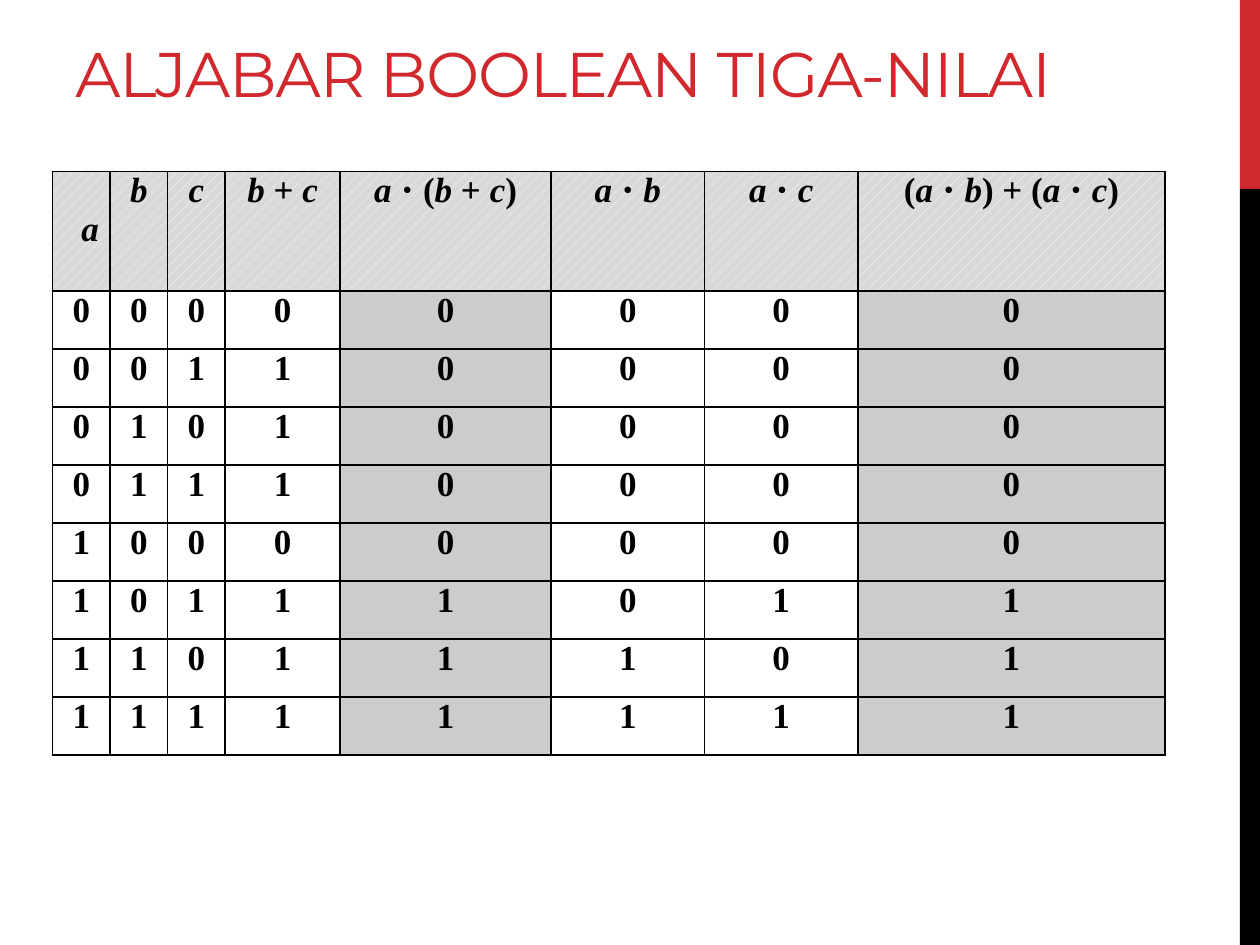
from itertools import groupby, product

from lxml.etree import SubElement as Sub
from pptx import Presentation
from pptx.dml.color import RGBColor as Rgb
from pptx.enum.dml import MSO_PATTERN as Pattern
from pptx.enum.shapes import MSO_SHAPE as Shape
from pptx.enum.text import MSO_ANCHOR as Anchor, PP_ALIGN as Align
from pptx.oxml.ns import qn
from pptx.util import Pt

COLORS = {"red": "D1282E", "black": "000000", "white": "FFFFFF",
          "head": "D9D9D9", "gray": "CCCCCC"}
HEADS = ["a", "b", "c", "b + c", "a ⋅ (b + c)", "a ⋅ b", "a ⋅ c",
         "(a ⋅ b) + (a ⋅ c)"]
WIDTHS = [32.9, 32.9, 32.9, 65.7, 120.6, 87.7, 87.7, 175.5]
SHADED = (4, 7)  # the two sides of the law being proved
HEAD_H, ROW_H = 68.4, 33.15


def color(name):
    return Rgb.from_string(COLORS[name])


def add_run(para, text, font, size, hue, bold=False, italic=False):
    run = para.add_run()
    run.text = text
    run.font.name, run.font.size = font, Pt(size)
    run.font.bold, run.font.italic = bold, italic
    run.font.color.rgb = color(hue)
    return run


def add_bar(slide, top, height, hue):
    bar = slide.shapes.add_shape(Shape.RECTANGLE, Pt(708.5), Pt(top),
                                 Pt(11.5), Pt(height))
    bar.shadow.inherit = False
    bar.fill.solid()
    bar.fill.fore_color.rgb = color(hue)
    bar.line.fill.background()


def add_title(slide, text):
    box = slide.shapes.add_textbox(Pt(36), Pt(12.25), Pt(648), Pt(54))
    frame = box.text_frame
    frame.word_wrap = True
    frame.vertical_anchor = Anchor.BOTTOM
    run = add_run(frame.paragraphs[0], text, "Montserrat", 36, "red")
    run.font._element.set("spc", "-60")


def set_edges(cell):
    props = cell._tc.get_or_add_tcPr()
    for side in ("lnL", "lnR", "lnT", "lnB"):
        line = Sub(props, qn(f"a:{side}"), w=str(Pt(1)))
        fill = Sub(line, qn("a:solidFill"))
        Sub(fill, qn("a:srgbClr"), val=COLORS["black"])


def fill_cell(cell, text):
    """Write a formula or value, with the variables in italics."""
    set_edges(cell)
    cell.margin_left = cell.margin_right = Pt(5)
    cell.margin_top = cell.margin_bottom = 0
    para = cell.text_frame.paragraphs[0]
    para.alignment = Align.CENTER
    for is_var, part in groupby(text, str.isalpha):
        add_run(para, "".join(part), "Times New Roman", 20, "black",
                bold=True, italic=is_var)


def truth_rows():
    for a, b, c in product((0, 1), repeat=3):
        yield a, b, c, b | c, a & (b | c), a & b, a & c, (a & b) | (a & c)


def add_table(slide):
    rows = list(truth_rows())
    frame = slide.shapes.add_table(
        len(rows) + 1, len(HEADS), Pt(30), Pt(98),
        Pt(sum(WIDTHS)), Pt(HEAD_H + ROW_H * len(rows)))
    table = frame.table
    table.first_row = table.horz_banding = False
    for col, width in zip(table.columns, WIDTHS):
        col.width = Pt(width)
    for i, row in enumerate(table.rows):
        row.height = Pt(ROW_H if i else HEAD_H)

    # Header row
    for j, text in enumerate(HEADS):
        cell = table.cell(0, j)
        fill_cell(cell, text)
        cell.fill.patterned()
        cell.fill.pattern = Pattern.PERCENT_20
        cell.fill.fore_color.rgb = color("white")
        cell.fill.back_color.rgb = color("head")
    # The first heading sits one line lower and to the right
    first = table.cell(0, 0)
    first.margin_left, first.margin_top = Pt(15), Pt(22.3)

    # Truth values
    for i, row in enumerate(rows, 1):
        for j, value in enumerate(row):
            cell = table.cell(i, j)
            fill_cell(cell, str(value))
            cell.fill.solid()
            cell.fill.fore_color.rgb = color("gray" if j in SHADED else "white")


def main():
    deck = Presentation()
    deck.slide_width, deck.slide_height = Pt(720), Pt(540)
    slide = deck.slides.add_slide(deck.slide_layouts[6])
    # Side bars
    add_bar(slide, 0, 108, "red")
    add_bar(slide, 108, 432, "black")
    # Title and table
    add_title(slide, "ALJABAR BOOLEAN TIGA-NILAI")
    add_table(slide)
    deck.save("out.pptx")


if __name__ == "__main__":
    main()
